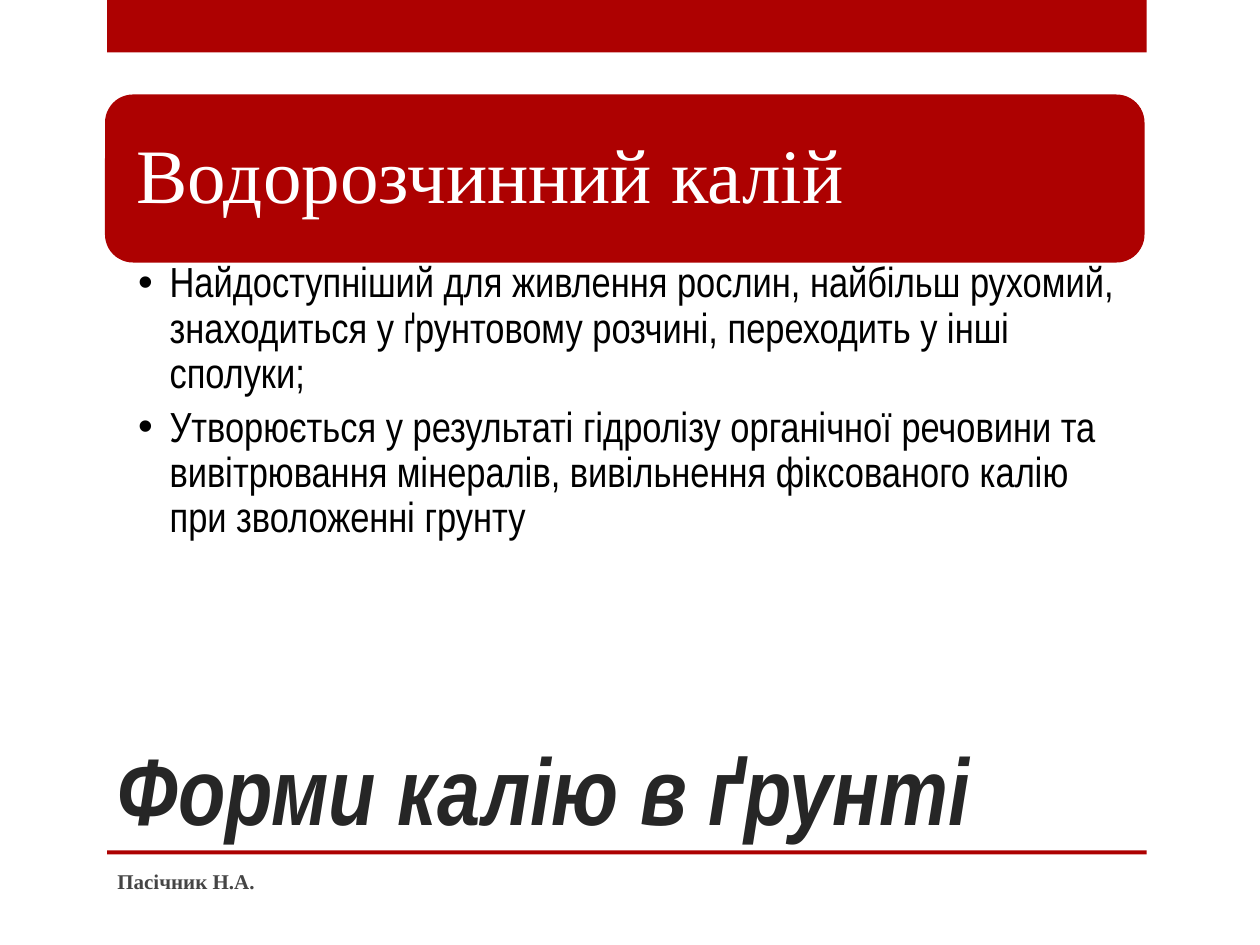
from dataclasses import dataclass

from lxml import etree
from pptx import Presentation
from pptx import util as u
from pptx.dml.color import RGBColor
from pptx.enum import shapes, text
from pptx.oxml.ns import qn


@dataclass(frozen=True)
class Theme:
    red: str = "AD0101"
    white: str = "FFFFFF"
    black: str = "000000"
    title_ink: str = "262626"
    footer_ink: str = "454545"
    sans: str = "Arial Narrow"
    serif: str = "Times New Roman"
    title_size: int = 54
    heading_size: int = 44
    body_size: int = 24
    footer_size: int = 12


THEME = Theme()
TITLE = "Форми калію в ґрунті"
HEADING = "Водорозчинний калій"
POINTS = [
    "Найдоступніший для живлення рослин, найбільш рухомий, знаходиться у ґрунтовому розчині, переходить у інші сполуки;",
    "Утворюється у результаті гідролізу органічної речовини та вивітрювання мінералів, вивільнення фіксованого калію при зволоженні грунту",
]
AUTHOR = "Пасічник Н.А."

LEFT, WIDTH = 60, 594
BAND_LEFT = 61.2
RULE_TOP = 486
INDENT = 18
BANDS = [(0, 30), (RULE_TOP, 2.2)]
CARD = (LEFT, 54, WIDTH, 96)
CARD_PAD = 4.7


def points(values):
    return [u.Pt(value) for value in values]


def add_block(page, kind, area):
    block = page.shapes.add_shape(kind, *points(area))
    block.shadow.inherit = False
    block.fill.solid()
    block.fill.fore_color.rgb = RGBColor.from_string(THEME.red)
    block.line.fill.background()
    return block


def set_frame(box, anchor, insets=(7.2, 3.6, 7.2, 3.6)):
    frame = box.text_frame
    frame.word_wrap = True
    frame.auto_size = text.MSO_AUTO_SIZE.NONE
    frame.vertical_anchor = anchor
    (frame.margin_left, frame.margin_top,
     frame.margin_right, frame.margin_bottom) = points(insets)
    return frame


def add_box(page, area, anchor, **options):
    return set_frame(page.shapes.add_textbox(*points(area)), anchor, **options)


def write(para, words, font, size, color, bold=False, italic=False, spacing=1.0):
    para.alignment = text.PP_ALIGN.LEFT
    para.line_spacing = spacing
    span = para.add_run()
    span.text = words
    span.font.name = font
    span.font.size = u.Pt(size)
    span.font.bold = bold
    span.font.italic = italic
    span.font.color.rgb = RGBColor.from_string(color)


def add_bullet(para):
    props = para._p.get_or_add_pPr()
    props.set("marL", str(u.Pt(INDENT)))
    props.set("indent", str(-u.Pt(INDENT)))
    etree.SubElement(props, qn("a:buFont")).set("typeface", "Arial")
    etree.SubElement(props, qn("a:buChar")).set("char", "•")


def main():
    deck = Presentation()
    deck.slide_width, deck.slide_height = points((720, 540))
    page = deck.slides.add_slide(deck.slide_layouts[5])

    for top, height in BANDS:
        add_block(page, shapes.MSO_SHAPE.RECTANGLE, (BAND_LEFT, top, WIDTH, height))

    title = page.shapes.title
    title.left, title.top, title.width, title.height = points((LEFT, 360, 534, RULE_TOP - 360))
    frame = set_frame(title, text.MSO_ANCHOR.BOTTOM)
    write(frame.paragraphs[0], TITLE, THEME.sans, THEME.title_size,
          THEME.title_ink, bold=True, italic=True)

    add_block(page, shapes.MSO_SHAPE.ROUNDED_RECTANGLE, CARD)
    left, top, width, height = CARD
    inner = (left + CARD_PAD, top + CARD_PAD, width - 2 * CARD_PAD, height - 2 * CARD_PAD)
    frame = add_box(page, inner, text.MSO_ANCHOR.MIDDLE, insets=(13.2,) * 4)
    write(frame.paragraphs[0], HEADING, THEME.serif, THEME.heading_size,
          THEME.white, spacing=0.9)

    frame = add_box(page, (LEFT, 147, WIDTH, 169), text.MSO_ANCHOR.TOP,
                    insets=(18.9, 2.4, 13.5, 2.4))
    for index, words in enumerate(POINTS):
        para = frame.add_paragraph() if index else frame.paragraphs[0]
        para.space_after = u.Pt(0.2 * THEME.body_size)
        add_bullet(para)
        write(para, words, THEME.sans, THEME.body_size, THEME.black, spacing=0.9)

    frame = add_box(page, (LEFT, 489, 384, 28.8), text.MSO_ANCHOR.MIDDLE)
    write(frame.paragraphs[0], AUTHOR, THEME.serif, THEME.footer_size,
          THEME.footer_ink, bold=True)

    deck.save("out.pptx")


if __name__ == "__main__":
    main()
